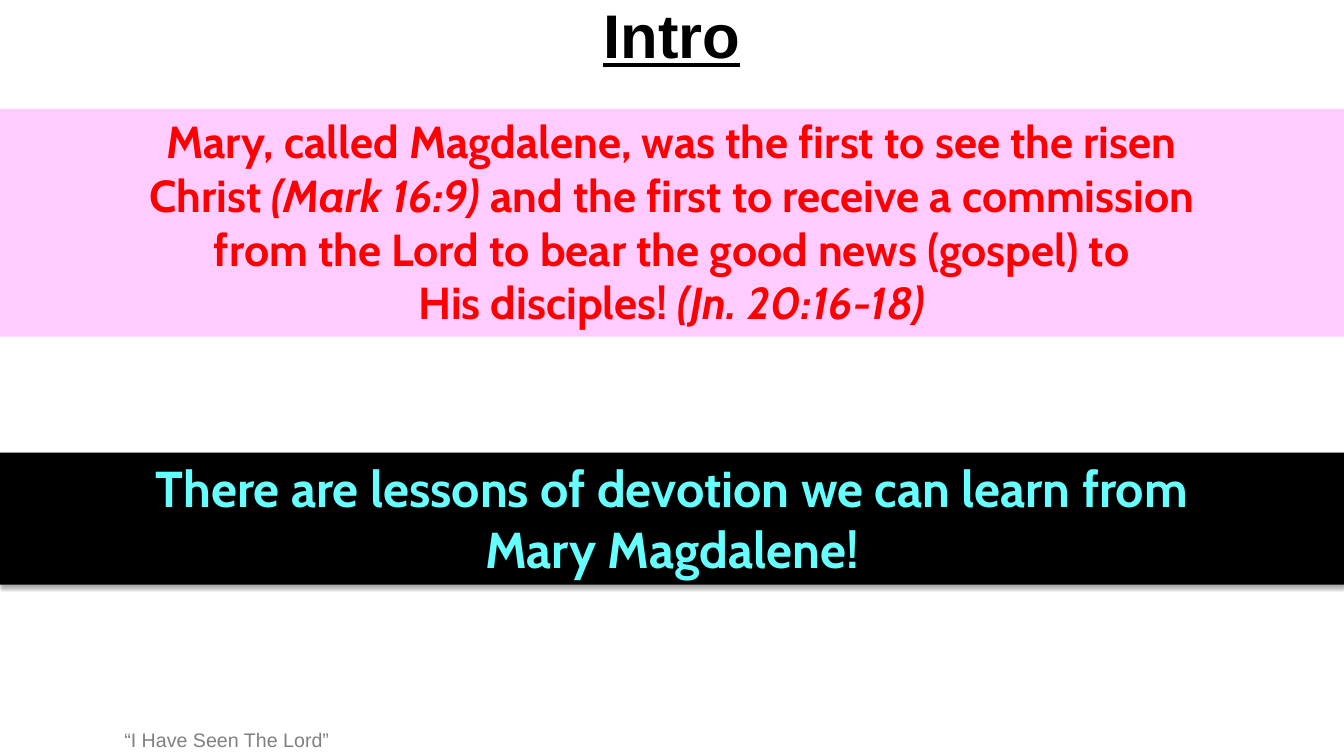
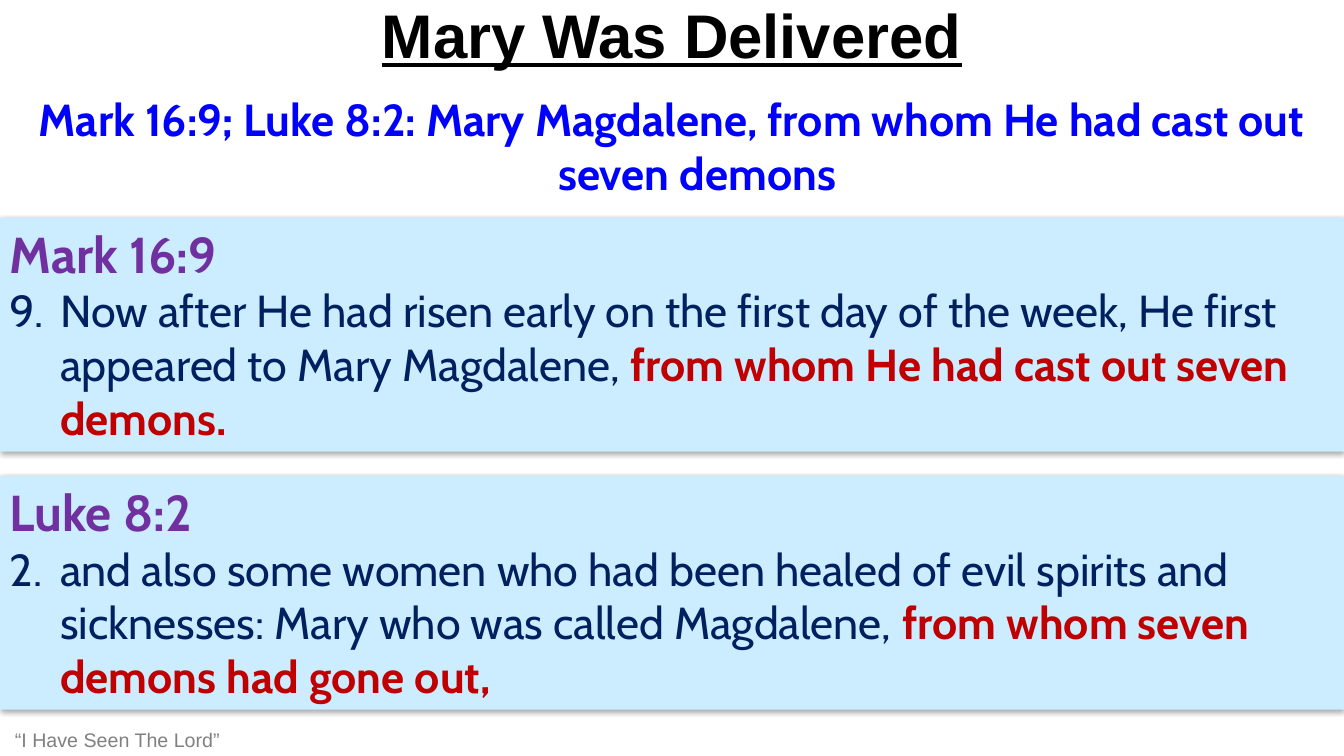
"""Build two lesson slides with titles, verse bands and footers."""
from dataclasses import dataclass

from lxml import etree
from pptx import Presentation
from pptx.dml.color import RGBColor
from pptx.enum.shapes import MSO_SHAPE
from pptx.enum.text import MSO_ANCHOR, PP_ALIGN
from pptx.oxml.ns import qn
from pptx.util import Inches, Pt

RECTANGLE = MSO_SHAPE.RECTANGLE
TOP, MIDDLE = MSO_ANCHOR.TOP, MSO_ANCHOR.MIDDLE
LEFT, CENTER = PP_ALIGN.LEFT, PP_ALIGN.CENTER

PAGE_WIDTH, PAGE_HEIGHT = 13.33, 7.5
TITLE_FONT, BODY_FONT = "Arial", "Cabin"
BLACK, GRAY, RED, BLUE = "000000", "808080", "FF0000", "0000FF"
PINK, CYAN, PALE_BLUE = "FFCCFF", "66FFFF", "CCECFF"
PURPLE, NAVY, DARK_RED = "7030A0", "002060", "C00000"
FOOTER = "“I Have Seen The Lord”"
HANGING = 0.5


@dataclass(frozen=True)
class Span:
    """A piece of text and what sets it apart from its paragraph."""
    text: str
    italic: bool | None = None
    bold: bool | None = None
    color: str | None = None


@dataclass(frozen=True)
class Para:
    """A paragraph with its shared font."""
    spans: tuple[Span, ...]
    size: int
    color: str
    font: str = BODY_FONT
    bold: bool = True
    underline: bool = False
    align: PP_ALIGN = CENTER
    hanging: float = HANGING


@dataclass(frozen=True)
class Band:
    """A full-width block of text."""
    top: float
    height: float
    paras: tuple[Para, ...]
    fill: str | None = None
    shadow: bool = False


def rgb(color: str) -> RGBColor:
    """Turn a hex string into a colour."""
    return RGBColor.from_string(color)


def write(shape, paras: tuple[Para, ...], anchor: MSO_ANCHOR = TOP) -> None:
    """Fill a shape with formatted paragraphs."""
    frame = shape.text_frame
    frame.word_wrap = True
    frame.vertical_anchor = anchor
    for index, item in enumerate(paras):
        para = frame.add_paragraph() if index else frame.paragraphs[0]
        para.alignment = item.align
        if item.hanging:
            properties = para._p.get_or_add_pPr()
            properties.set("marL", str(Inches(item.hanging)))
            properties.set("indent", str(-Inches(item.hanging)))
        font = para.font
        font.name, font.size, font.bold = item.font, Pt(item.size), item.bold
        font.underline = item.underline
        font.color.rgb = rgb(item.color)
        for piece in item.spans:
            span = para.add_run()
            span.text = piece.text
            span.font.italic = piece.italic
            span.font.bold = piece.bold
            if piece.color:
                span.font.color.rgb = rgb(piece.color)


def add_shadow(shape) -> None:
    """Give a shape a soft shadow below it."""
    effects = shape._element.spPr.find(qn("a:effectLst"))
    outer = etree.SubElement(effects, qn("a:outerShdw"), blurRad=str(Pt(3.1)),
                             dist=str(Pt(1.8)), dir="5400000", rotWithShape="0")
    color = etree.SubElement(outer, qn("a:srgbClr"), val=BLACK)
    etree.SubElement(color, qn("a:alpha"), val="35000")


def add_text(page, top: float, width: float, height: float,
             paras: tuple[Para, ...], anchor: MSO_ANCHOR = TOP) -> None:
    """Add a text box at the left edge of the page."""
    box = page.shapes.add_textbox(0, Inches(top), Inches(width), Inches(height))
    write(box, paras, anchor)


def add_band(page, band: Band) -> None:
    """Add a block of text across the page."""
    if band.fill is None:
        add_text(page, band.top, PAGE_WIDTH, band.height, band.paras)
        return
    shape = page.shapes.add_shape(RECTANGLE, 0, Inches(band.top),
                                  Inches(PAGE_WIDTH), Inches(band.height))
    shape.shadow.inherit = False
    shape.fill.solid()
    shape.fill.fore_color.rgb = rgb(band.fill)
    shape.line.fill.background()
    if band.shadow:
        add_shadow(shape)
    write(shape, band.paras)


def add_page(deck, title: str, footer_width: float, bands: tuple[Band, ...]) -> None:
    """Add a slide with its title, footer and bands."""
    page = deck.slides.add_slide(deck.slide_layouts[6])
    heading = Para((Span(title),), 44, BLACK, TITLE_FONT, underline=True, hanging=0)
    footer = Para((Span(FOOTER),), 14, GRAY, TITLE_FONT, bold=False, hanging=0)
    add_text(page, 0, PAGE_WIDTH, 0.67, (heading,), MIDDLE)
    add_text(page, 7.17, footer_width, 0.33, (footer,))
    for band in bands:
        add_band(page, band)


def verse_band(top: float, reference: str, verse: str, emphasis: str) -> Band:
    """Make a band that quotes a verse and stresses its end."""
    heading = Para((Span(reference),), 36, PURPLE, align=LEFT, hanging=0)
    quote = Para((Span(verse), Span(emphasis, bold=True, color=DARK_RED)),
                 32, NAVY, bold=False, align=LEFT)
    return Band(top, 2.32, (heading, quote), PALE_BLUE, shadow=True)


INTRO_LINES = (
    (Span("Mary, called Magdalene, was the first to see the risen"),),
    (Span("Christ "), Span("(Mark 16:9) ", italic=True),
     Span("and the first to receive a commission")),
    (Span("from the Lord to bear the good news (gospel) to"),),
    (Span("His disciples! "), Span("(Jn. 20:16-18)", italic=True)),
)
LESSON_LINES = ("There are lessons of devotion we can learn from", "Mary Magdalene!")
SUMMARY = "Mark 16:9; Luke 8:2: Mary Magdalene, from whom He had cast out seven demons"

INTRO_BANDS = (
    Band(1.08, 2.26, tuple(Para(line, 32, RED) for line in INTRO_LINES), PINK),
    Band(4.49, 1.31, tuple(Para((Span(line),), 36, CYAN) for line in LESSON_LINES),
         BLACK, shadow=True),
)
DELIVERED_BANDS = (
    Band(0.86, 1.18, (Para((Span(SUMMARY),), 32, BLUE),)),
    verse_band(2.16, "Mark 16:9",
               "9.\tNow after He had risen early on the first day of the week, "
               "He first appeared to Mary Magdalene, ",
               "from whom He had cast out seven demons."),
    verse_band(4.72, "Luke 8:2",
               "2.\tand also some women who had been healed of evil spirits and "
               "sicknesses: Mary who was called Magdalene, ",
               "from whom seven demons had gone out,"),
)


def main() -> None:
    """Build and save the deck."""
    deck = Presentation()
    deck.slide_width, deck.slide_height = Inches(PAGE_WIDTH), Inches(PAGE_HEIGHT)
    add_page(deck, "Intro", 4.5, INTRO_BANDS)
    add_page(deck, "Mary Was Delivered", 2.33, DELIVERED_BANDS)
    deck.save("out.pptx")


if __name__ == "__main__":
    main()
